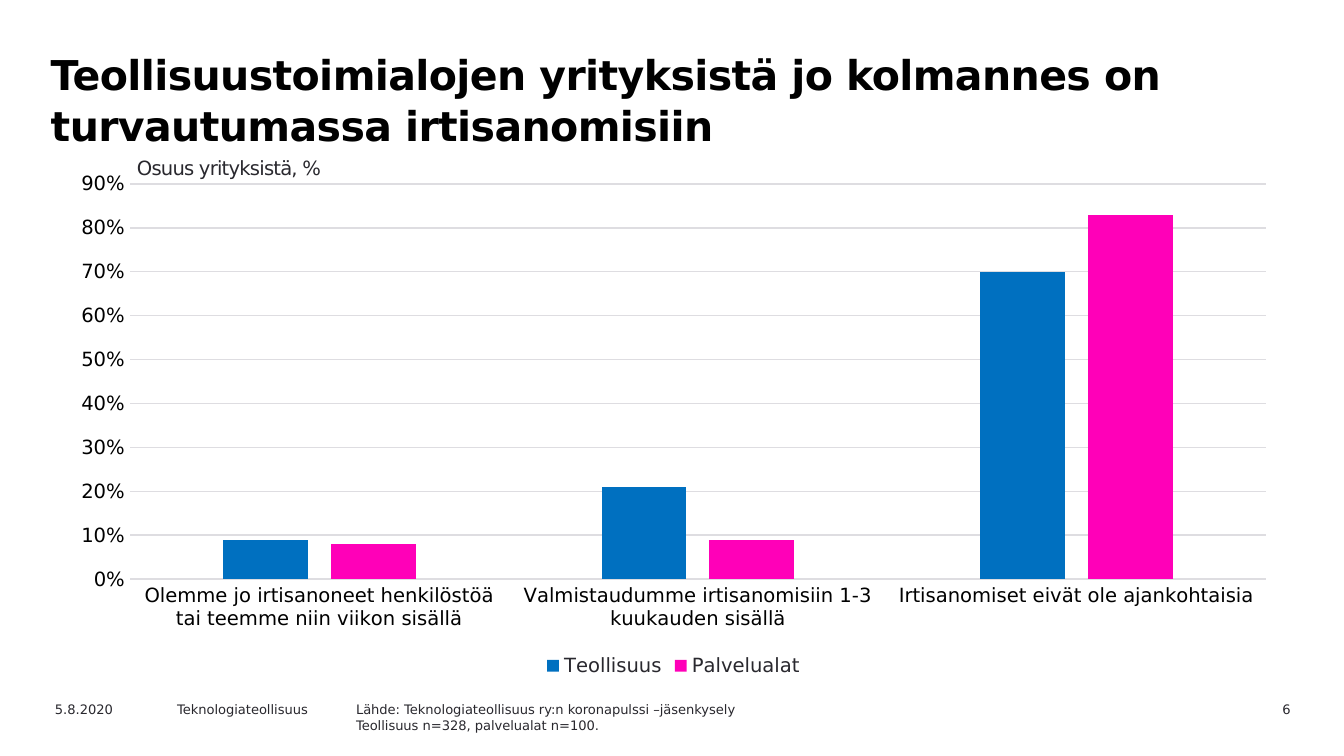
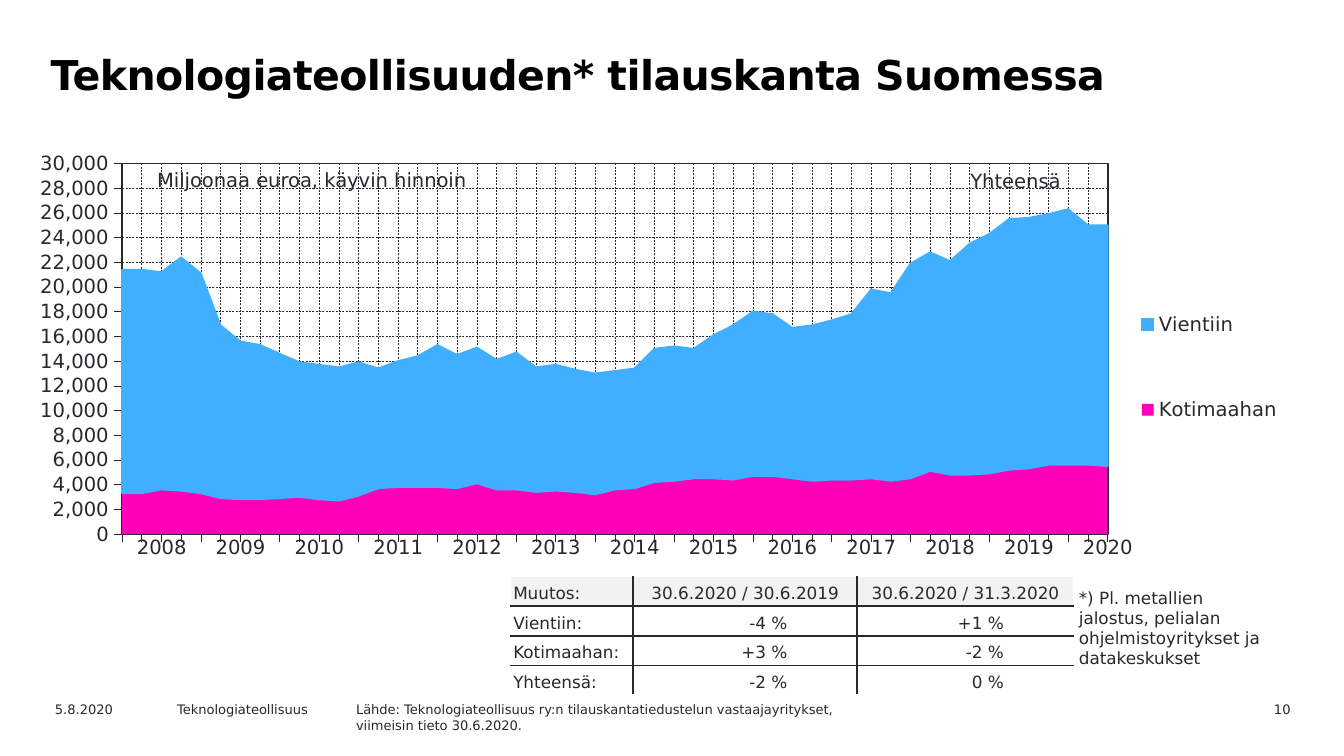
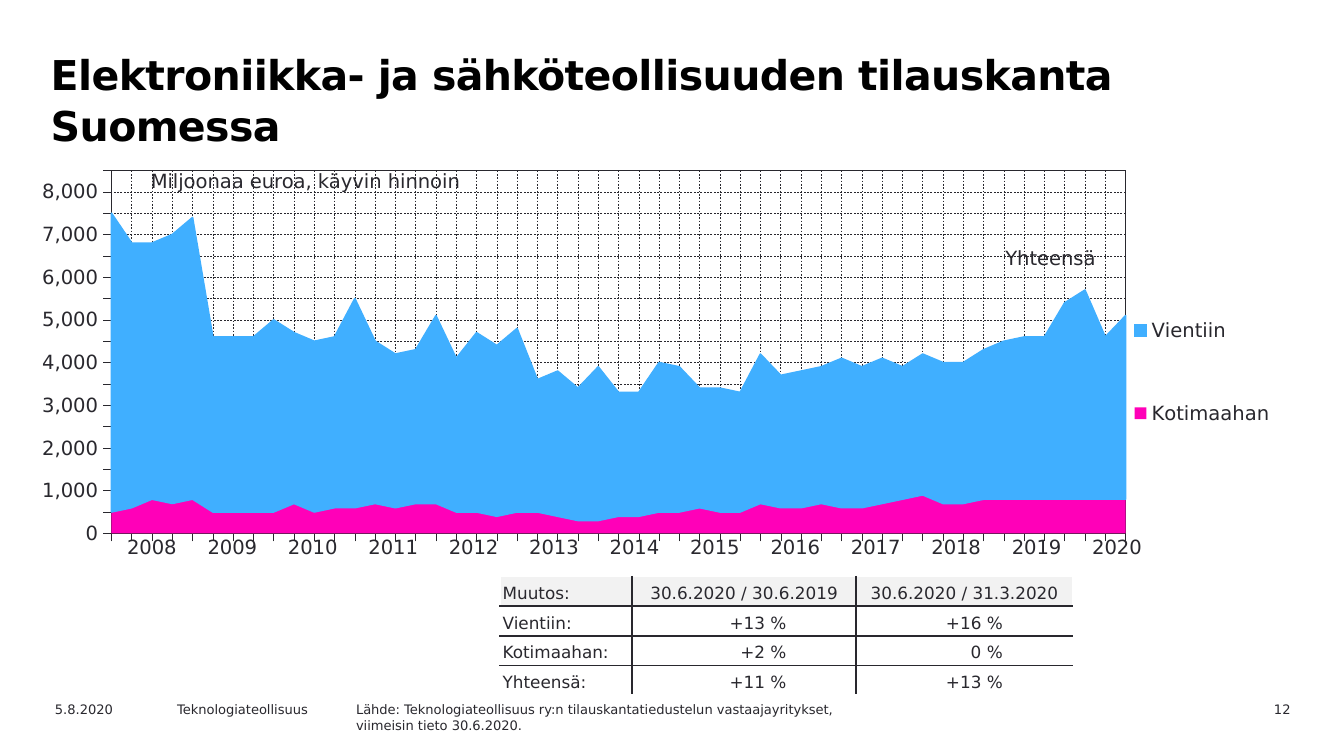
import dataclasses
import typing

import lxml.etree
import pptx
import pptx.chart.data
import pptx.dml.color
import pptx.enum.chart
import pptx.enum.dml
import pptx.enum.text
import pptx.oxml
import pptx.oxml.ns
import pptx.util

INK = "29282E"
BLACK = "000000"
WHITE = "FFFFFF"
HEADER_GREY = "F2F2F2"
GRID_GREY = "DEDDE1"
DEEP_BLUE = "0070C0"
SKY_BLUE = "40AFFF"
PINK = "FF00B8"
FONT = "DejaVu Sans"
LABEL_SIZE = 10.5
NO_TABLE_STYLE = "{2D5ABB26-0587-4C30-8999-92F81FD0307C}"
ORDER_SOURCE = (
    "Lähde: Teknologiateollisuus ry:n tilauskantatiedustelun vastaajayritykset,",
    "viimeisin tieto 30.6.2020.",
)
YEARS = [str(year) for year in range(2008, 2021)]

Align = pptx.enum.text.PP_ALIGN
Fit = pptx.enum.text.MSO_AUTO_SIZE
Tick = pptx.enum.chart.XL_TICK_MARK
Kind = pptx.enum.chart.XL_CHART_TYPE
Legend = pptx.enum.chart.XL_LEGEND_POSITION


@dataclasses.dataclass(frozen=True)
class Box:
    left: float
    top: float
    width: float
    height: float

    def lengths(self) -> list[pptx.util.Length]:
        return [pptx.util.Cm(value) for value in dataclasses.astuple(self)]


@dataclasses.dataclass(frozen=True)
class TextStyle:
    size: float
    color: str = INK
    bold: bool = False
    align: typing.Any = None
    line_height: float | None = None
    tracking: int | None = None
    inset: tuple[float, float] = (0.25, 0.13)
    fit: typing.Any = Fit.NONE
    wrap: bool = True


@dataclasses.dataclass(frozen=True)
class Series:
    name: str
    color: str
    values: list[float]
    outline: float | None = None


@dataclasses.dataclass(frozen=True)
class OrderBook:
    title: str
    number: int
    chart: Box
    plot: Box
    legend: Box
    domestic: list[int]
    export: list[int]
    axis: dict[str, int]
    unit: tuple[float, float]
    total: tuple[float, float]
    years: tuple[float, float]
    year_width: float
    change_left: float
    label_width: float
    changes: list[tuple[str, str]]
    note: str | None = None


TITLE = TextStyle(22, BLACK, True, line_height=27, tracking=-30)
FOOTER = TextStyle(7)
PAGE_NUMBER = TextStyle(7, align=Align.RIGHT)
AXIS_NOTE = TextStyle(LABEL_SIZE, tracking=-40, inset=(0.1, 0.1), fit=Fit.SHAPE_TO_FIT_TEXT)
UNIT = TextStyle(LABEL_SIZE, inset=(0.23, 0.13), fit=Fit.SHAPE_TO_FIT_TEXT, wrap=False)
TOTAL = TextStyle(LABEL_SIZE, inset=(0.23, 0.1), fit=Fit.SHAPE_TO_FIT_TEXT)
NOTE = TextStyle(9, fit=Fit.SHAPE_TO_FIT_TEXT)
YEAR = TextStyle(LABEL_SIZE, align=Align.CENTER)
CHANGE_LABEL = TextStyle(9)
CHANGE_HEAD = TextStyle(9, align=Align.CENTER)
CHANGE_VALUE = TextStyle(9, align=Align.RIGHT)


def rgb(color: str) -> pptx.dml.color.RGBColor:
    return pptx.dml.color.RGBColor.from_string(color)


def set_values(target: typing.Any, values: dict[str, typing.Any]) -> None:
    for name, value in values.items():
        setattr(target, name, value)


def set_font(font: typing.Any, size: float, color: str = INK, bold: bool = False) -> None:
    set_values(font, {"name": FONT, "size": pptx.util.Pt(size), "bold": bold})
    font.color.rgb = rgb(color)


def set_fill(fill: typing.Any, color: str) -> None:
    fill.solid()
    fill.fore_color.rgb = rgb(color)


def set_line(line: typing.Any, color: str, width: float, dashed: bool = False) -> None:
    set_fill(line.fill, color)
    line.width = pptx.util.Pt(width)
    if dashed:
        line.dash_style = pptx.enum.dml.MSO_LINE.DASH


def write_lines(frame: typing.Any, lines: typing.Sequence[str], style: TextStyle) -> None:
    for index, line in enumerate(lines):
        para = frame.add_paragraph() if index else frame.paragraphs[0]
        para.alignment = style.align
        if style.line_height:
            para.line_spacing = pptx.util.Pt(style.line_height)
        span = para.add_run()
        span.text = line
        set_font(span.font, style.size, style.color, style.bold)
        if style.tracking:
            span.font._element.set("spc", str(style.tracking))


def add_text(page: typing.Any, box: Box, style: TextStyle, *lines: str) -> None:
    frame = page.shapes.add_textbox(*box.lengths()).text_frame
    across, down = map(pptx.util.Cm, style.inset)
    set_values(frame, {
        "margin_left": across, "margin_right": across,
        "margin_top": down, "margin_bottom": down,
        "word_wrap": style.wrap, "auto_size": style.fit,
    })
    write_lines(frame, lines, style)


def add_page(deck: typing.Any, title: str, number: int, source: typing.Sequence[str],
             source_width: float) -> typing.Any:
    page = deck.slides.add_slide(deck.slide_layouts[6])
    add_text(page, Box(0.71, 0.79, 22.2, 1.8), TITLE, title)
    footers = [
        (22.25, 2.39, PAGE_NUMBER, [str(number)]),
        (0.79, 2.54, FOOTER, ["5.8.2020"]),
        (3.1, 3.61, FOOTER, ["Teknologiateollisuus"]),
        (6.48, source_width, FOOTER, source),
    ]
    for left, width, style, lines in footers:
        add_text(page, Box(left, 13.13, width, 0.46), style, *lines)
    return page


def add_chart(page: typing.Any, box: Box, kind: typing.Any, categories: list[str],
              series_list: list[Series], number_format: str, legend: typing.Any) -> typing.Any:
    data = pptx.chart.data.CategoryChartData(number_format=number_format)
    data.categories = categories
    for series in series_list:
        data.add_series(series.name, series.values)
    chart = page.shapes.add_chart(kind, *box.lengths(), data).chart
    set_values(chart, {"has_title": False, "has_legend": True})
    set_values(chart.legend, {"position": legend, "include_in_layout": False})
    for font in (chart.font, chart.legend.font):
        set_font(font, LABEL_SIZE)
    plot = chart.plots[0]
    plot.vary_by_categories = False
    for drawn, series in zip(plot.series, series_list):
        set_fill(drawn.format.fill, series.color)
        if series.outline:
            set_line(drawn.format.line, series.color, series.outline)
    set_values(chart.value_axis.tick_labels,
               {"number_format": number_format, "number_format_is_linked": False})
    return chart


def style_axis(axis: typing.Any, color: str, tick: typing.Any,
               values: dict[str, typing.Any]) -> None:
    set_values(axis, {"major_tick_mark": tick, "minor_tick_mark": Tick.NONE, **values})
    set_font(axis.tick_labels.font, LABEL_SIZE, color)


def set_layout(parent: typing.Any, index: int, area: Box, inner: bool) -> None:
    for old in parent.findall(pptx.oxml.ns.qn("c:layout")):
        parent.remove(old)
    target = '<c:layoutTarget val="inner"/>' if inner else ""
    sides = zip("xywh", dataclasses.astuple(area))
    marks = '<c:xMode val="edge"/><c:yMode val="edge"/>' + "".join(
        f'<c:{side} val="{value}"/>' for side, value in sides)
    parent.insert(index, pptx.oxml.parse_xml(
        f'<c:layout {pptx.oxml.ns.nsdecls("c")}><c:manualLayout>{target}{marks}'
        "</c:manualLayout></c:layout>"))


def frame_plot(area: typing.Any, color: str, width: float) -> None:
    area.append(pptx.oxml.parse_xml(
        f'<c:spPr {pptx.oxml.ns.nsdecls("c", "a")}><a:noFill/>'
        f'<a:ln w="{pptx.util.Pt(width)}"><a:solidFill><a:srgbClr val="{color}"/>'
        "</a:solidFill></a:ln></c:spPr>"))


def add_table(page: typing.Any, left: float, top: float, widths: list[float],
              row_height: float, rows: int) -> typing.Any:
    box = Box(left, top, sum(widths), row_height * rows)
    table = page.shapes.add_table(rows, len(widths), *box.lengths()).table
    set_values(table, {"first_row": False, "horz_banding": False})
    table._tbl.tblPr.find(pptx.oxml.ns.qn("a:tableStyleId")).text = NO_TABLE_STYLE
    for column, width in zip(table.columns, widths):
        column.width = pptx.util.Cm(width)
    for row in table.rows:
        row.height = pptx.util.Cm(row_height)
    return table


def set_borders(cell: typing.Any, colors: dict[str, str]) -> None:
    properties = cell._tc.get_or_add_tcPr()
    for index, (side, color) in enumerate(colors.items()):
        line = lxml.etree.Element(pptx.oxml.ns.qn(f"a:ln{side}"), w=str(pptx.util.Pt(1)))
        fill = lxml.etree.SubElement(line, pptx.oxml.ns.qn("a:solidFill"))
        lxml.etree.SubElement(fill, pptx.oxml.ns.qn("a:srgbClr"), val=color)
        properties.insert(index, line)


def add_change_table(page: typing.Any, book: OrderBook) -> None:
    rows = [("Muutos:", "30.6.2020 / 30.6.2019", "30.6.2020 / 31.3.2020")]
    rows += [(label, *change) for label, change in
             zip(("Vientiin:", "Kotimaahan:", "Yhteensä:"), book.changes)]
    widths = [book.label_width, 4.24, 4.09]
    table = add_table(page, book.change_left, 10.9, widths, 0.56, len(rows))
    last_row, last_column = len(rows) - 1, len(widths) - 1
    for row, texts in enumerate(rows):
        for column, text in enumerate(texts):
            cell = table.cell(row, column)
            style = CHANGE_VALUE if row else CHANGE_HEAD
            if column == 0:
                style = CHANGE_LABEL
            right = 1.32 if style is CHANGE_VALUE else 0.05
            set_values(cell, {
                "margin_left": pptx.util.Cm(0.05), "margin_right": pptx.util.Cm(right),
                "margin_top": pptx.util.Cm(0.05), "margin_bottom": pptx.util.Cm(0.05),
                "vertical_anchor": pptx.enum.text.MSO_ANCHOR.BOTTOM,
            })
            write_lines(cell.text_frame, [text], style)
            set_fill(cell.fill, WHITE if row else HEADER_GREY)
            set_borders(cell, {
                "L": INK if column else WHITE,
                "R": INK if column < last_column else WHITE,
                "T": INK if row else WHITE,
                "B": INK if row < last_row else WHITE,
            })


def add_years(page: typing.Any, book: OrderBook) -> None:
    table = add_table(page, *book.years, [book.year_width] * len(YEARS), 0.79, 1)
    for column, year in enumerate(YEARS):
        cell = table.cell(0, column)
        cell.fill.background()
        write_lines(cell.text_frame, [year], YEAR)


def add_order_chart(page: typing.Any, book: OrderBook) -> None:
    series = [Series("Kotimaahan", PINK, book.domestic),
              Series("Vientiin", SKY_BLUE, book.export, 0.88)]
    quarters = [str(quarter) for quarter in range(1, 51)]
    chart = add_chart(page, book.chart, Kind.AREA_STACKED, quarters, series,
                      "#,##0", Legend.RIGHT)
    hidden = {"tick_label_position": pptx.enum.chart.XL_TICK_LABEL_POSITION.NONE}
    for axis, values in ((chart.category_axis, hidden), (chart.value_axis, book.axis)):
        style_axis(axis, INK, Tick.OUTSIDE, {"has_major_gridlines": True, **values})
        set_line(axis.format.line, INK, 0.22)
        set_line(axis.major_gridlines.format.line, INK, 0.25, dashed=True)
    area = chart._chartSpace.chart.plotArea
    set_layout(area, 0, book.plot, inner=True)
    set_layout(chart.legend._element, 1, book.legend, inner=False)
    frame_plot(area, INK, 0.88)


def add_order_page(deck: typing.Any, book: OrderBook) -> None:
    page = add_page(deck, book.title, book.number, ORDER_SOURCE, 12.7)
    add_order_chart(page, book)
    add_text(page, Box(*book.unit, 6.6, 0.69), UNIT, "Miljoonaa euroa, käyvin hinnoin")
    add_change_table(page, book)
    if book.note:
        add_text(page, Box(20.14, 10.97, 4.22, 1.8), NOTE, book.note)
    add_text(page, Box(*book.total, 2.69, 0.69), TOTAL, "Yhteensä")
    add_years(page, book)


def add_layoff_page(deck: typing.Any) -> None:
    page = add_page(
        deck, "Teollisuustoimialojen yrityksistä jo kolmannes on turvautumassa irtisanomisiin", 6,
        ("Lähde: Teknologiateollisuus ry:n koronapulssi –jäsenkysely",
         "Teollisuus n=328, palvelualat n=100."), 8.26)
    categories = ["Olemme jo irtisanoneet henkilöstöä tai teemme niin viikon sisällä",
                  "Valmistaudumme irtisanomisiin 1-3 kuukauden sisällä",
                  "Irtisanomiset eivät ole ajankohtaisia"]
    series = [Series("Teollisuus", DEEP_BLUE, [0.09, 0.21, 0.7]),
              Series("Palvelualat", PINK, [0.08, 0.09, 0.83])]
    chart = add_chart(page, Box(1.07, 3.07, 23.32, 9.83), Kind.COLUMN_CLUSTERED,
                      categories, series, "0%", Legend.BOTTOM)
    set_values(chart.plots[0], {"gap_width": 219, "overlap": -27})
    style_axis(chart.category_axis, BLACK, Tick.NONE, {"has_major_gridlines": False})
    style_axis(chart.value_axis, BLACK, Tick.NONE,
               {"has_major_gridlines": True, "major_unit": 0.1})
    set_line(chart.category_axis.format.line, GRID_GREY, 0.75)
    set_line(chart.value_axis.major_gridlines.format.line, GRID_GREY, 0.75)
    chart.value_axis.format.line.fill.background()
    add_text(page, Box(2.49, 2.84, 8.61, 0.66), AXIS_NOTE, "Osuus yrityksistä, %")


TECHNOLOGY = OrderBook(
    title="Teknologiateollisuuden* tilauskanta Suomessa", number=10,
    chart=Box(0.51, 2.82, 24.61, 7.92),
    plot=Box(0.073, 0.034, 0.757, 0.885), legend=Box(0.853, 0.24, 0.11, 0.56),
    domestic=[
        3300, 3300, 3600, 3500, 3300, 2900, 2800, 2800, 2900, 3000, 2800, 2700, 3100,
        3700, 3800, 3800, 3800, 3700, 4100, 3600, 3600, 3400, 3500, 3400, 3200, 3600,
        3700, 4200, 4300, 4500, 4500, 4400, 4700, 4700, 4500, 4300, 4400, 4400, 4500,
        4300, 4500, 5100, 4800, 4800, 4900, 5200, 5300, 5600, 5600, 5600, 5500],
    export=[
        18100, 18100, 17600, 18900, 17800, 14000, 12800, 12500, 11700, 10900, 10900,
        10800, 10800, 9700, 10200, 10600, 11500, 10800, 11000, 10500, 11100, 10100,
        10200, 9900, 9800, 9600, 9700, 10800, 10900, 10500, 11600, 12500, 13300, 13100,
        12200, 12600, 12900, 13400, 15300, 15200, 17400, 17700, 17300, 18700, 19400,
        20300, 20300, 20300, 20700, 19400, 19500],
    axis={"minimum_scale": 0, "maximum_scale": 30000, "major_unit": 2000},
    unit=(2.74, 3.05), total=(18.11, 3.1), years=(2.31, 10.01), year_width=1.49,
    change_left=9.65, label_width=2.31,
    changes=[("-4 %", "+1 %"), ("+3 %", "-2 %"), ("-2 %", "0 %")],
    note="*) Pl. metallien jalostus, pelialan ohjelmistoyritykset ja datakeskukset",
)
ELECTRONICS = OrderBook(
    title="Elektroniikka- ja sähköteollisuuden tilauskanta Suomessa", number=12,
    chart=Box(0.3, 3, 24.08, 7.75),
    plot=Box(0.075, 0.029, 0.796, 0.885), legend=Box(0.876, 0.245, 0.11, 0.55),
    domestic=[
        500, 600, 800, 700, 800, 500, 500, 500, 500, 700, 500, 600, 600, 700, 600, 700,
        700, 500, 500, 400, 500, 500, 400, 300, 300, 400, 400, 500, 500, 600, 500, 500,
        700, 600, 600, 700, 600, 600, 700, 800, 900, 700, 700, 800, 800, 800, 800, 800,
        800, 800, 800],
    export=[
        7000, 6200, 6000, 6300, 6600, 4100, 4100, 4100, 4500, 4000, 4000, 4000, 4900,
        3800, 3600, 3600, 4400, 3600, 4200, 4000, 4300, 3100, 3400, 3100, 3600, 2900,
        2900, 3500, 3400, 2800, 2900, 2800, 3500, 3100, 3200, 3200, 3500, 3300, 3400,
        3100, 3300, 3300, 3300, 3500, 3700, 3800, 3800, 4600, 4900, 3800, 4300],
    axis={"maximum_scale": 8500, "major_unit": 500},
    unit=(2.62, 3.07), total=(18.77, 4.55), years=(2.11, 10.01), year_width=1.52,
    change_left=9.45, label_width=2.49,
    changes=[("+13 %", "+16 %"), ("+2 %", "0 %"), ("+11 %", "+13 %")],
)


def main() -> None:
    deck = pptx.Presentation()
    set_values(deck, {"slide_width": pptx.util.Cm(25.4), "slide_height": pptx.util.Cm(14.29)})
    add_layoff_page(deck)
    for book in (TECHNOLOGY, ELECTRONICS):
        add_order_page(deck, book)
    deck.save("out.pptx")


if __name__ == "__main__":
    main()
